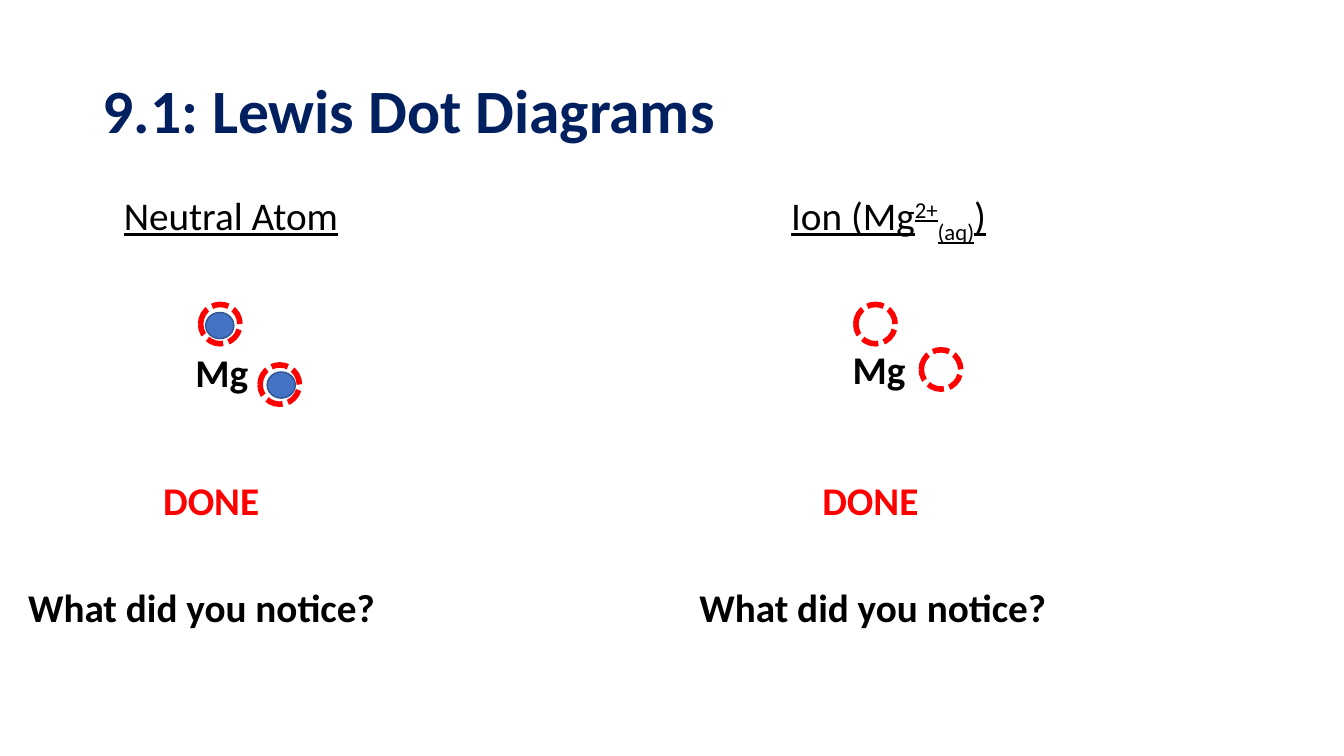
import dataclasses

import pptx
import pptx.dml.color
import pptx.enum.dml
import pptx.enum.shapes
import pptx.enum.text
import pptx.shapes.autoshape
import pptx.slide
import pptx.util

COLOURS: dict[str, str] = {
    "title": "002060",
    "text": "000000",
    "done": "FF0000",
    "ring": "FF0000",
    "electron": "4472C4",
    "electron edge": "325491",
}
FONT = "Calibri"

# Grid of square cells, ten to the inch
CELL = 0.1
COLUMNS, ROWS = 133.33, 75
LABEL_ROWS = 5.7
HEADING_ROW, DONE_ROW, QUESTION_ROW = 18.5, 46.8, 57.4
RING_SIZE = 3.9
ELECTRON_WIDTH, ELECTRON_HEIGHT = 2.8, 2.6


@dataclasses.dataclass(frozen=True)
class Place:
    column: float
    row: float


@dataclasses.dataclass(frozen=True)
class Piece:
    text: str
    baseline: int = 0


@dataclasses.dataclass(frozen=True)
class Style:
    colour: str = "text"
    size: int = 28
    bold: bool = True
    underline: bool = False


@dataclasses.dataclass(frozen=True)
class Diagram:
    heading: list[Piece]
    heading_column: float
    symbol: Place
    done_column: float
    question_column: float
    rings: list[Place]
    electrons: list[Place]


HEADING = Style(bold=False, underline=True)
DIAGRAMS = [
    Diagram(
        [Piece("Neutral Atom")], 11.3, Place(18.4, 34.1), 15.2, 1.8,
        rings=[Place(19.9, 30.2), Place(25.8, 36.2)],
        electrons=[Place(20.4, 31), Place(26.5, 36.9)],
    ),
    Diagram(
        [Piece("Ion (Mg"), Piece("2+", 30), Piece("(aq)", -25), Piece(")")],
        77.5, Place(83.6, 33.8), 80.6, 68.4,
        rings=[Place(84.9, 30.2), Place(91.4, 34.7)],
        electrons=[],
    ),
]


def cells(count: float) -> pptx.util.Length:
    return pptx.util.Inches(count * CELL)


def colour(name: str) -> pptx.dml.color.RGBColor:
    return pptx.dml.color.RGBColor.from_string(COLOURS[name])


def add_text(slide: pptx.slide.Slide, pieces: list[Piece], place: Place,
             width: float, style: Style = Style(), height: float = LABEL_ROWS,
             ) -> pptx.shapes.autoshape.Shape:
    shape = slide.shapes.add_textbox(
        cells(place.column), cells(place.row), cells(width), cells(height))
    shape.text_frame.word_wrap = True
    paragraph = shape.text_frame.paragraphs[0]
    for piece in pieces:
        run = paragraph.add_run()
        run.text = piece.text
        run.font.name = FONT
        run.font.size = pptx.util.Pt(style.size)
        run.font.bold = style.bold
        run.font.underline = style.underline
        run.font.color.rgb = colour(style.colour)
        if piece.baseline:
            run._r.get_or_add_rPr().set("baseline", str(piece.baseline * 1000))
    return shape


def add_circle(slide: pptx.slide.Slide, place: Place, width: float,
               height: float, edge: str, edge_points: float,
               ) -> pptx.shapes.autoshape.Shape:
    shape = slide.shapes.add_shape(
        pptx.enum.shapes.MSO_SHAPE.OVAL,
        cells(place.column), cells(place.row), cells(width), cells(height))
    shape.shadow.inherit = False
    shape.fill.background()
    shape.line.color.rgb = colour(edge)
    shape.line.width = pptx.util.Pt(edge_points)
    return shape


def add_electron(slide: pptx.slide.Slide, place: Place) -> None:
    shape = add_circle(slide, place, ELECTRON_WIDTH, ELECTRON_HEIGHT,
                       "electron edge", 1)
    shape.fill.solid()
    shape.fill.fore_color.rgb = colour("electron")


def add_ring(slide: pptx.slide.Slide, place: Place) -> None:
    shape = add_circle(slide, place, RING_SIZE, RING_SIZE, "ring", 4)
    shape.line.dash_style = pptx.enum.dml.MSO_LINE.SQUARE_DOT


def add_title(slide: pptx.slide.Slide) -> None:
    shape = add_text(slide, [Piece("9.1: Lewis Dot Diagrams")], Place(9.2, 4),
                     115, Style("title", 44), 14.5)
    shape.text_frame.vertical_anchor = pptx.enum.text.MSO_ANCHOR.MIDDLE
    shape.text_frame.paragraphs[0].line_spacing = 0.9


def add_diagram(slide: pptx.slide.Slide, diagram: Diagram) -> None:
    # Heading and element symbol
    add_text(slide, diagram.heading,
             Place(diagram.heading_column, HEADING_ROW), 23.8, HEADING)
    add_text(slide, [Piece("Mg")], diagram.symbol, 9.5)

    # Valence electrons and the rings around their places
    for place in diagram.electrons:
        add_electron(slide, place)
    for place in diagram.rings:
        add_ring(slide, place)

    # Closing labels
    add_text(slide, [Piece("DONE")],
             Place(diagram.done_column, DONE_ROW), 12.7, Style("done"))
    add_text(slide, [Piece("What did you notice?")],
             Place(diagram.question_column, QUESTION_ROW), 37.2)


def main() -> None:
    presentation = pptx.Presentation()
    presentation.slide_width = cells(COLUMNS)
    presentation.slide_height = cells(ROWS)
    slide = presentation.slides.add_slide(presentation.slide_layouts[6])
    add_title(slide)
    for diagram in DIAGRAMS:
        add_diagram(slide, diagram)
    presentation.save("out.pptx")


if __name__ == "__main__":
    main()
